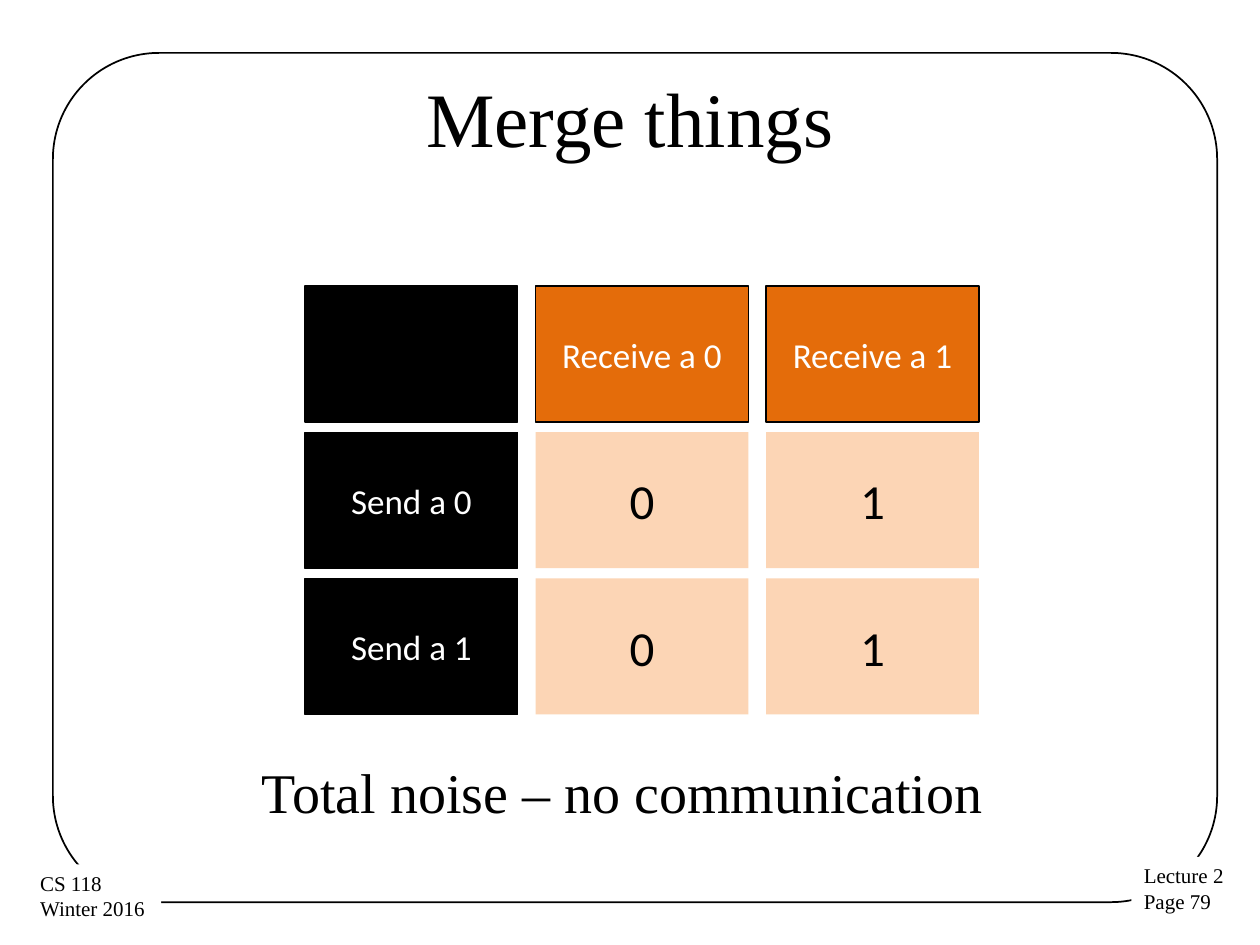
from dataclasses import dataclass

from pptx import Presentation
from pptx.dml.color import RGBColor
from pptx.enum.shapes import MSO_SHAPE
from pptx.enum.text import MSO_ANCHOR, PP_ALIGN
from pptx.util import Inches, Pt

RECTANGLE = MSO_SHAPE.RECTANGLE
ROUNDED_RECTANGLE = MSO_SHAPE.ROUNDED_RECTANGLE
MIDDLE, TOP = MSO_ANCHOR.MIDDLE, MSO_ANCHOR.TOP
CENTER, LEFT = PP_ALIGN.CENTER, PP_ALIGN.LEFT
TITLE_ONLY = 5


@dataclass(frozen=True)
class Theme:
    """Colours, fonts and type sizes of the slide."""
    black: RGBColor = RGBColor(0x00, 0x00, 0x00)
    white: RGBColor = RGBColor(0xFF, 0xFF, 0xFF)
    orange: RGBColor = RGBColor(0xE4, 0x6C, 0x0A)
    peach: RGBColor = RGBColor(0xFC, 0xD5, 0xB5)
    serif: str = "Times New Roman"
    sans: str = "Calibri"
    title_size: int = 44
    caption_size: int = 32
    value_size: int = 28
    header_size: int = 20
    footer_size: int = 12


THEME = Theme()


def write_lines(shape, lines, font_name, size, color, align=LEFT, anchor=TOP, wrap=True):
    """Write one formatted paragraph per line into a shape."""
    frame = shape.text_frame
    frame.word_wrap = wrap
    frame.vertical_anchor = anchor
    for index, line in enumerate(lines):
        paragraph = frame.add_paragraph() if index else frame.paragraphs[0]
        paragraph.alignment = align
        run = paragraph.add_run()
        run.text = line
        run.font.name = font_name
        run.font.size = Pt(size)
        run.font.color.rgb = color


def add_box(slide, kind, box, fill=None, line_width=None):
    """Add a flat shape with an optional fill and black outline."""
    shape = slide.shapes.add_shape(kind, *map(Inches, box))
    shape.shadow.inherit = False
    if fill is None:
        shape.fill.background()
    else:
        shape.fill.solid()
        shape.fill.fore_color.rgb = fill
    if line_width is None:
        shape.line.fill.background()
    else:
        shape.line.color.rgb = THEME.black
        shape.line.width = Pt(line_width)
    return shape


def add_frame(slide, box):
    """Draw the rounded border around the slide."""
    frame = add_box(slide, ROUNDED_RECTANGLE, box, line_width=1)
    frame.adjustments[0] = 0.125


def add_corner_label(slide, box, lines):
    """Place a white label that interrupts the border."""
    label = add_box(slide, RECTANGLE, box, fill=THEME.white)
    write_lines(label, lines, THEME.serif, THEME.footer_size, THEME.black, wrap=False)


def add_title(slide, box, text):
    """Move and fill the title placeholder."""
    title = slide.shapes.title
    title.left, title.top, title.width, title.height = map(Inches, box)
    write_lines(title, [text], THEME.serif, THEME.title_size, THEME.black, CENTER, MIDDLE)


def add_channel_grid(slide, box, rows, gap_x=0.14, gap_y=0.08):
    """Lay out sent and received bits as evenly spaced rectangles."""
    left, top, width, height = box
    column_count = len(rows[0])
    cell_width = (width - gap_x * (column_count - 1)) / column_count
    cell_height = (height - gap_y * (len(rows) - 1)) / len(rows)
    for row, labels in enumerate(rows):
        for column, label in enumerate(labels):
            is_value = row > 0 and column > 0
            if is_value:
                fill, color, size = THEME.peach, THEME.black, THEME.value_size
            else:
                fill = THEME.orange if column else THEME.black
                color, size = THEME.white, THEME.header_size
            cell_box = (left + column * (cell_width + gap_x),
                        top + row * (cell_height + gap_y), cell_width, cell_height)
            cell = add_box(slide, RECTANGLE, cell_box, fill, None if is_value else 0.75)
            if label:
                write_lines(cell, [label], THEME.sans, size, color, CENTER, MIDDLE)


def add_caption(slide, box, text):
    """Add the conclusion below the grid."""
    caption = slide.shapes.add_textbox(*map(Inches, box))
    write_lines(caption, [text], THEME.serif, THEME.caption_size, THEME.black, wrap=False)


def main():
    """Build and save the presentation."""
    presentation = Presentation()
    presentation.slide_width, presentation.slide_height = Inches(10), Inches(7.5)
    slide = presentation.slides.add_slide(presentation.slide_layouts[TITLE_ONLY])
    add_frame(slide, (0.42, 0.42, 9.24, 6.74))
    add_corner_label(slide, (8.98, 6.8, 0.84, 0.51), ["Lecture 2", "Page 79"])
    add_corner_label(slide, (0.22, 6.86, 1.06, 0.51), ["CS 118", "Winter 2016"])
    add_title(slide, (0.5, 0.3, 9, 1.25), "Merge things")
    add_channel_grid(slide, (2.42, 2.27, 5.35, 3.4), [
        ["", "Receive a 0", "Receive a 1"],
        ["Send a 0", "0", "1"],
        ["Send a 1", "0", "1"],
    ])
    add_caption(slide, (1.98, 5.96, 5.98, 0.64), "Total noise – no communication")
    presentation.save("out.pptx")


if __name__ == "__main__":
    main()
